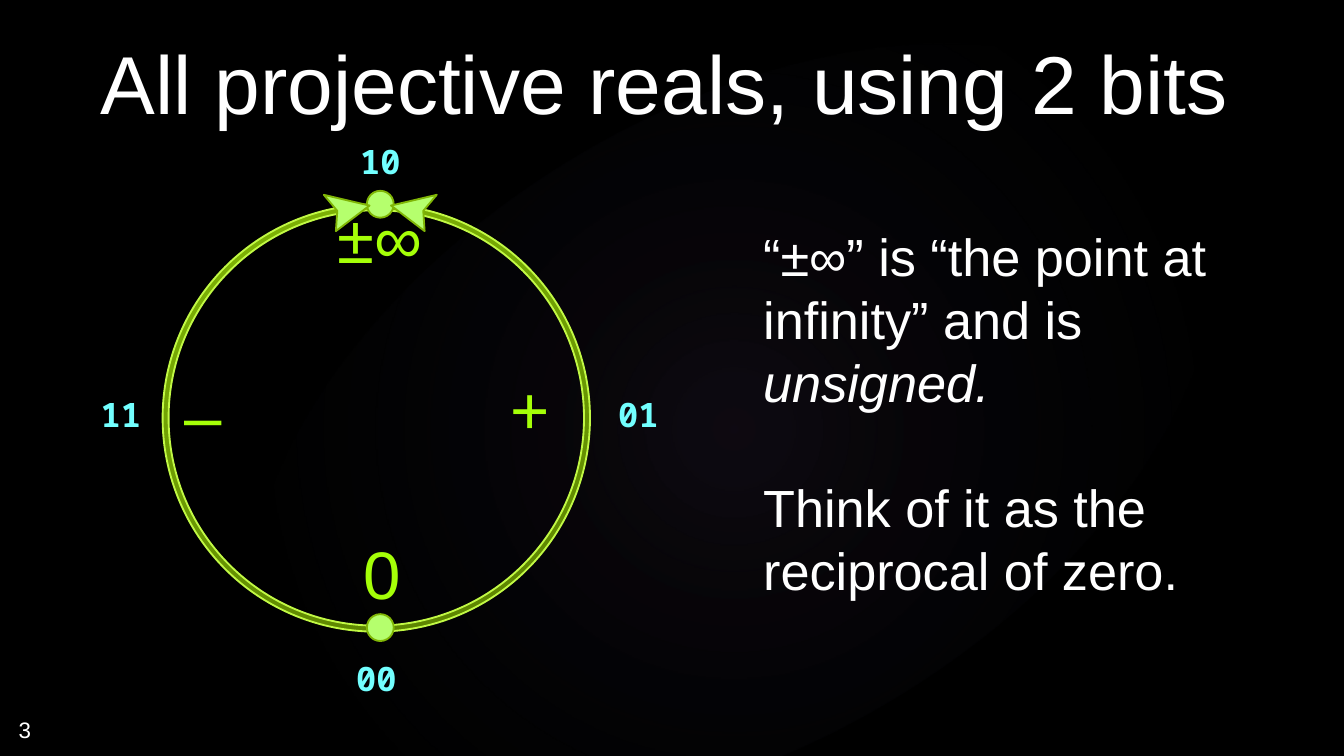
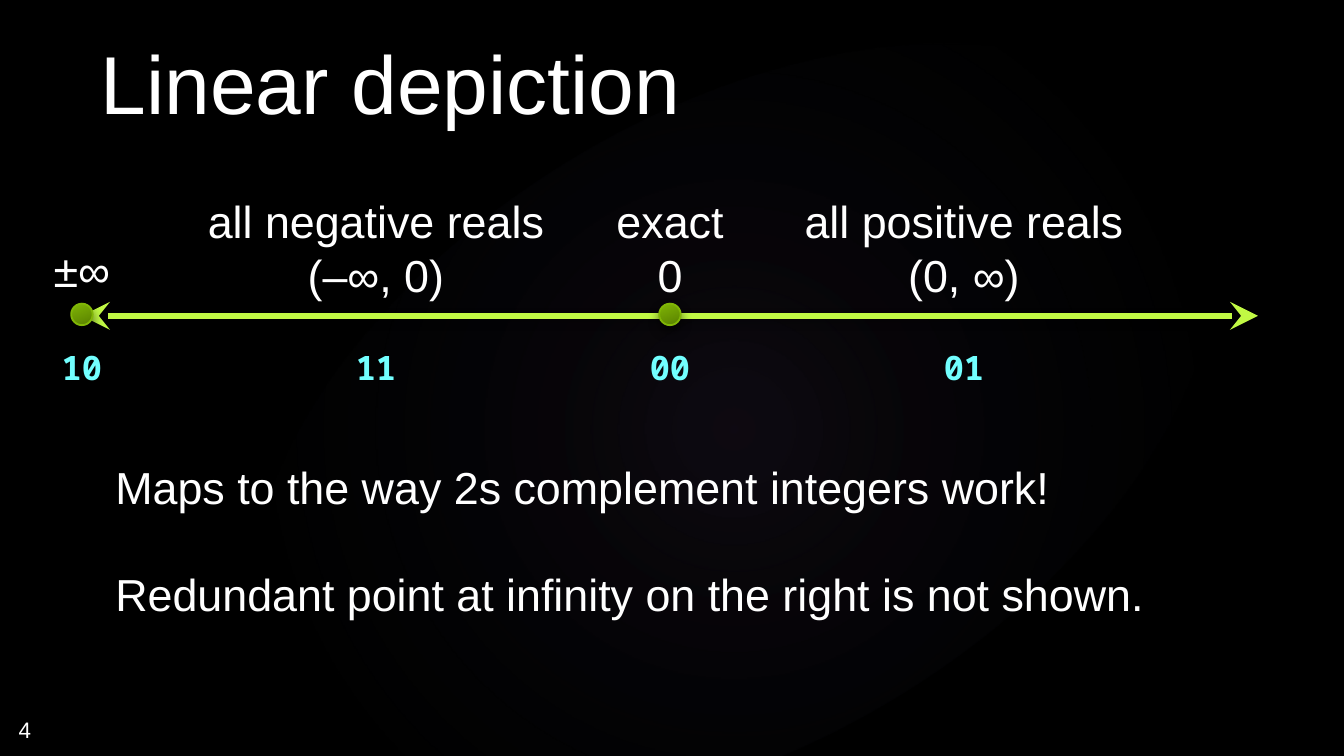
from dataclasses import dataclass

from pptx import Presentation
from pptx.dml.color import RGBColor
from pptx.enum.shapes import MSO_CONNECTOR, MSO_SHAPE
from pptx.enum.text import MSO_ANCHOR, MSO_AUTO_SIZE, PP_ALIGN
from pptx.oxml import parse_xml
from pptx.oxml.ns import nsdecls, qn
from pptx.util import Inches, Pt

OVAL, DONUT = MSO_SHAPE.OVAL, MSO_SHAPE.DONUT
STRAIGHT = MSO_CONNECTOR.STRAIGHT
LEFT, CENTER = PP_ALIGN.LEFT, PP_ALIGN.CENTER
TOP, MIDDLE, BOTTOM = MSO_ANCHOR.TOP, MSO_ANCHOR.MIDDLE, MSO_ANCHOR.BOTTOM
FIT, FIXED = MSO_AUTO_SIZE.SHAPE_TO_FIT_TEXT, MSO_AUTO_SIZE.NONE


@dataclass(frozen=True)
class Theme:
    font: str = "Arial"
    mono: str = "Noto Sans Mono"
    back: str = "000000"
    text: str = "FFFFFF"
    bits: str = "72FFFF"
    value: str = "A5FF08"
    bright: str = "C1F944"
    point: str = "B5FF6D"
    edge: str = "80B606"
    deep: str = "598000"
    glow: str = "BB85EC"
    haze: str = "465466"
    title_size: int = 44
    value_size: int = 36
    body_size: int = 28
    caption_size: int = 24
    bits_size: int = 18
    number_size: int = 12


T = Theme()
RADIAL = ('<a:path path="circle"><a:fillToRect l="50000" t="50000" '
          'r="50000" b="50000"/></a:path>')
SLOPED = '<a:lin ang="4140000" scaled="0"/>'
GREEN = [(0, T.edge, 100), (100, T.deep, 100)]


def rgb(color):
    return RGBColor.from_string(color)


def inches(values):
    return [Inches(v) for v in values]


def around(x, y, w, h):
    return x - w / 2, y - h / 2, w, h


def add_text(slide, box, paragraphs, *, size, color=T.text, font=T.font,
             bold=False, align=LEFT, anchor=TOP, wrap=False, inset=None,
             gap=0, fit=FIT):
    s = slide.shapes.add_textbox(*inches(box))
    tf = s.text_frame
    tf.word_wrap, tf.auto_size, tf.vertical_anchor = wrap, fit, anchor
    if inset is not None:
        tf.margin_left = tf.margin_right = Inches(inset)
        tf.margin_top = tf.margin_bottom = Inches(inset)
    for i, runs in enumerate(paragraphs):
        p = tf.paragraphs[0] if i == 0 else tf.add_paragraph()
        p.alignment = align
        if i:
            p.space_before = Pt(gap)
        for content, italic in [(runs, False)] if isinstance(runs, str) else runs:
            r = p.add_run()
            r.text = content
            f = r.font
            f.name, f.size, f.bold, f.italic = font, Pt(size), bold, italic
            f.color.rgb = rgb(color)
    return s


def add_bits(slide, x, y, code):
    add_text(slide, around(x, y, 0.5, 0.4), [code], size=T.bits_size,
             color=T.bits, font=T.mono, bold=True, align=CENTER)


def set_gradient(s, stops, direction):
    s.fill.background()
    marks = "".join(
        f'<a:gs pos="{pos * 1000}"><a:srgbClr val="{color}">'
        f'<a:alpha val="{alpha * 1000}"/></a:srgbClr></a:gs>'
        for pos, color, alpha in stops)
    spPr = s._element.spPr
    spPr.replace(spPr.find(qn("a:noFill")), parse_xml(
        f'<a:gradFill {nsdecls("a")} rotWithShape="1">'
        f'<a:gsLst>{marks}</a:gsLst>{direction}</a:gradFill>'))


def set_shadow(s, alpha, blur, dist):
    spPr = s._element.spPr
    old = spPr.find(qn("a:effectLst"))
    if old is not None:
        spPr.remove(old)
    spPr.append(parse_xml(
        f'<a:effectLst {nsdecls("a")}><a:outerShdw blurRad="{Pt(blur)}" '
        f'dist="{Pt(dist)}" dir="5400000" rotWithShape="0">'
        f'<a:srgbClr val="{T.back}"><a:alpha val="{alpha * 1000}"/></a:srgbClr>'
        f'</a:outerShdw></a:effectLst>'))


def style(s, fill=None, line=None):
    s.shadow.inherit = False
    if fill:
        s.fill.solid()
        s.fill.fore_color.rgb = rgb(fill)
    if line:
        s.line.color.rgb = rgb(line)
        s.line.width = Pt(1)
    else:
        s.line.fill.background()
    return s


def add_dot(slide, x, y, size, fill=None):
    s = slide.shapes.add_shape(OVAL, *inches(around(x, y, size, size)))
    return style(s, fill, T.edge)


def add_slide(prs, title, number):
    slide = prs.slides.add_slide(prs.slide_layouts[6])
    glow = style(slide.shapes.add_shape(OVAL, *inches((1.5, 0.85, 7.92, 4.68))))
    glow.rotation = 328.7
    set_gradient(glow, [(0, T.glow, 7), (58, T.haze, 0)], RADIAL)
    add_text(slide, (0.04, 5.28, 0.41, 0.3), [str(number)], size=T.number_size)
    add_text(slide, (0.65, 0.27, 8.91, 0.75), [title], size=T.title_size,
             anchor=BOTTOM, wrap=True, fit=FIXED)
    return slide


def add_body(slide, box, paragraphs, size):
    add_text(slide, box, paragraphs, size=size, wrap=True, gap=size * 1.2)


def add_arrowhead(slide, x, y, side):
    outline = [(0.33, 0.2), (0.08, 0.01), (0.42, -0.07), (0.32, 0.05)]
    points = [(Inches(x + side * dx), Inches(y + dy)) for dx, dy in outline]
    builder = slide.shapes.build_freeform(*points[0])
    builder.add_line_segments(points[1:], close=True)
    style(builder.convert_to_shape(), T.point, T.edge)


def add_ring(slide, x, y, size):
    axis, middle, bottom = x + size / 2 + 0.03, y + size / 2, y + size - 0.03
    for bx, by, code in [(axis - 0.03, bottom + 0.38, "00"),
                         (x + size + 0.36, middle - 0.03, "01"),
                         (axis, y - 0.32, "10"),
                         (x - 0.31, middle - 0.03, "11")]:
        add_bits(slide, bx, by, code)
    ring = slide.shapes.add_shape(DONUT, *inches((x, y, size, size)))
    ring.adjustments[0] = 0.014
    style(ring, line=T.bright)
    set_gradient(ring, GREEN, SLOPED)
    for vx, vy, w, h, value, inset in [
            (axis, y + 0.25, 0.84, 0.71, "±∞", None),
            (axis, bottom - 0.4, 0.45, 0.71, "0", None),
            (x + size - 0.45, middle - 0.08, 0.28, 0.61, "+", 0),
            (x + 0.29, middle - 0.03, 0.25, 0.61, "–", 0)]:
        add_text(slide, around(vx, vy, w, h), [value], size=T.value_size,
                 color=T.value, align=CENTER, inset=inset,
                 anchor=TOP if inset is None else MIDDLE)
    for dy in (bottom, y):
        add_dot(slide, axis, dy, 0.2, T.point)
    for side in (1, -1):
        add_arrowhead(slide, axis, y, side)


def add_number_line(slide, x, y, width):
    line = slide.shapes.add_connector(STRAIGHT, *inches((x, y, x + width, y)))
    line.line.color.rgb = rgb(T.bright)
    line.line.width = Pt(3)
    for end in ("headEnd", "tailEnd"):
        line.line._get_or_add_ln().append(parse_xml(
            f'<a:{end} {nsdecls("a")} type="stealth" w="lg" len="lg"/>'))
    set_shadow(line, 32, 5, 1)
    stations = [("10", ["±∞"], 0.63),
                ("11", ["all negative reals", "(–∞, 0)"], 2.73),
                ("00", ["exact", "0"], 1.02),
                ("01", ["all positive reals", "(0, ∞)"], 2.6)]
    for i, (code, caption, w) in enumerate(stations):
        cx = x + i * width / len(stations)
        h, rise = (0.5, 0.59) if len(caption) == 1 else (0.91, 0.96)
        if i % 2 == 0:
            dot = add_dot(slide, cx, y - 0.01, 0.16)
            set_gradient(dot, GREEN, SLOPED)
            set_shadow(dot, 60, 6, 3)
        add_text(slide, (cx - w / 2, y - rise, w, h), caption,
                 size=T.caption_size, align=CENTER)
        add_bits(slide, cx, y + 0.38, code)


def main():
    prs = Presentation()
    prs.slide_width = Inches(10)
    prs.slide_height = prs.slide_width * 9 // 16
    fill = prs.slide_master.background.fill
    fill.solid()
    fill.fore_color.rgb = rgb(T.back)

    slide = add_slide(prs, "All projective reals, using 2 bits", 3)
    add_body(slide, (5.58, 1.62, 3.72, 2.93),
             [[("“±∞” is “the point at infinity” and is ", False),
               ("unsigned.", True)],
              "Think of it as the reciprocal of zero."], T.body_size)
    add_ring(slide, 1.21, 1.52, 3.18)

    slide = add_slide(prs, "Linear depiction", 4)
    add_number_line(slide, 0.61, 2.35, 8.75)
    add_body(slide, (0.76, 3.37, 8.1, 1.31),
             ["Maps to the way 2s complement integers work!",
              "Redundant point at infinity on the right is not shown."],
             T.caption_size)
    prs.save("out.pptx")


if __name__ == "__main__":
    main()
